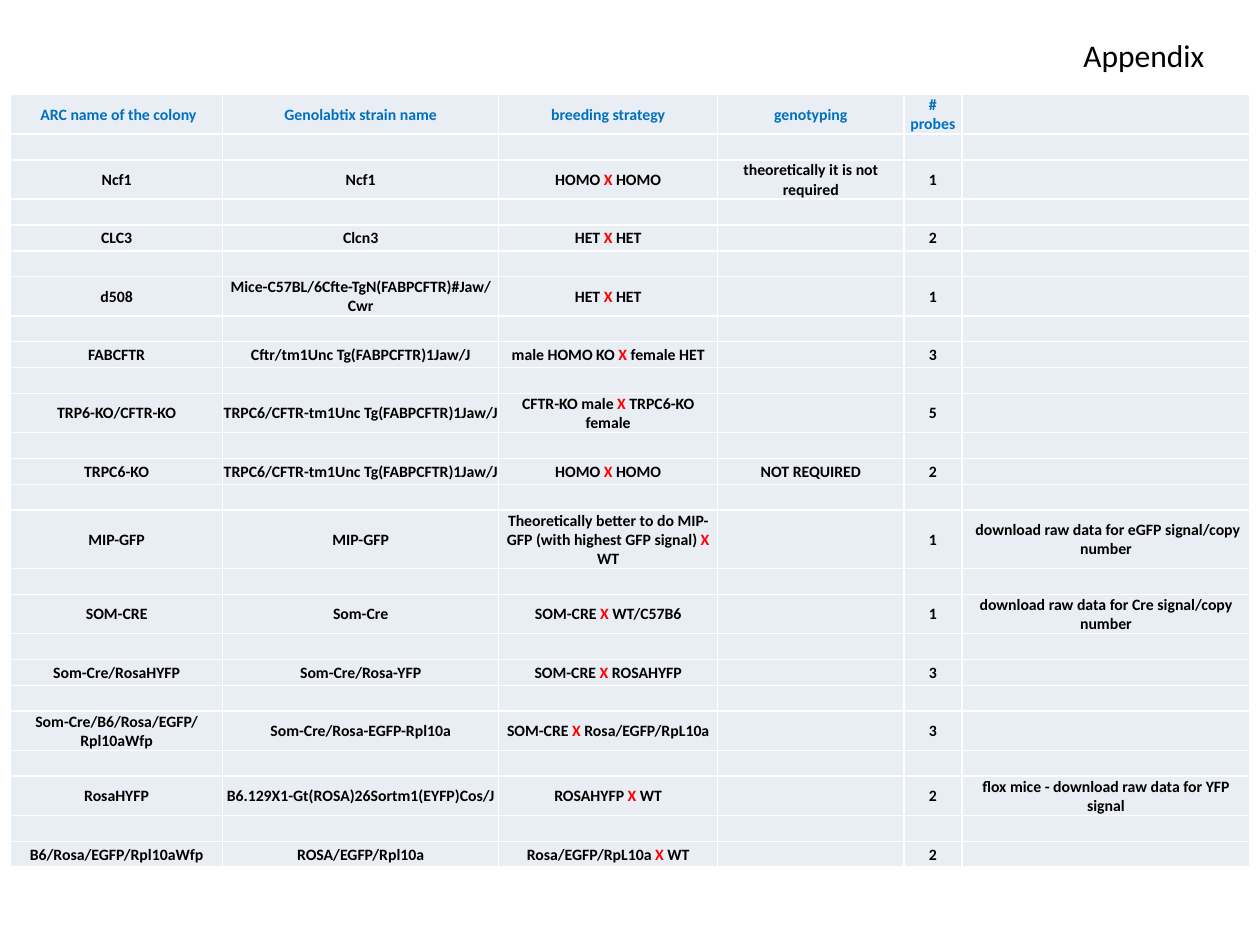
from lxml import etree
from pptx import Presentation
from pptx.dml.color import RGBColor
from pptx.enum import text
from pptx.oxml import ns
from pptx.util import Cm, Pt

FONT = "Calibri"
BLACK, BLUE, RED, WHITE, PALE = "000000", "0070C0", "FF0000", "FFFFFF", "E9EDF4"
CROSS = " X "
COLUMN_WIDTHS = [4.28, 5.56, 4.42, 3.75, 1.17, 5.81]
ROW_HEIGHT, TALL_ROW_HEIGHT = 0.52, 0.97
TALL_COLONY = "MIP-GFP"

HEADINGS = [" ARC name of the colony", "Genolabtix strain name", "breeding strategy",
            "genotyping", "# probes", ""]
COLONIES = [
    ["Ncf1", "Ncf1", "HOMO X HOMO", "theoretically it is not required", "1", ""],
    ["CLC3", "Clcn3", "HET X HET", "", "2", ""],
    ["d508", "Mice-C57BL/6Cfte-TgN(FABPCFTR)#Jaw/Cwr", "HET X HET", "", "1", ""],
    ["FABCFTR", "Cftr/tm1Unc Tg(FABPCFTR)1Jaw/J", "male HOMO KO X female HET", "", "3", ""],
    ["TRP6-KO/CFTR-KO", "TRPC6/CFTR-tm1Unc Tg(FABPCFTR)1Jaw/J",
     "CFTR-KO male X TRPC6-KO female", "", "5", ""],
    ["TRPC6-KO", "TRPC6/CFTR-tm1Unc Tg(FABPCFTR)1Jaw/J", "HOMO X HOMO", "NOT REQUIRED", "2", ""],
    [TALL_COLONY, "MIP-GFP", "Theoretically better to do MIP-GFP (with highest GFP signal) X WT",
     "", "1", " download raw data for eGFP signal/copy number"],
    ["SOM-CRE", "Som-Cre", "SOM-CRE X WT/C57B6", "", "1",
     "download raw data for Cre signal/copy number"],
    ["Som-Cre/RosaHYFP", "Som-Cre/Rosa-YFP", "SOM-CRE X ROSAHYFP", "", "3", ""],
    ["Som-Cre/B6/Rosa/EGFP/Rpl10aWfp", "Som-Cre/Rosa-EGFP-Rpl10a",
     "SOM-CRE X Rosa/EGFP/RpL10a", "", "3", ""],
    ["RosaHYFP", "B6.129X1-Gt(ROSA)26Sortm1(EYFP)Cos/J", "ROSAHYFP X WT", "", "2",
     "flox mice - download raw data for YFP signal"],
    ["B6/Rosa/EGFP/Rpl10aWfp", "ROSA/EGFP/Rpl10a", "Rosa/EGFP/RpL10a X WT", "", "2", ""],
]


def color(value):
    return RGBColor.from_string(value)


def set_font(font, size, value, bold=False):
    font.name = FONT
    font.size = Pt(size)
    font.bold = bold
    font.color.rgb = color(value)


def add_borders(cell):
    properties = cell._tc.get_or_add_tcPr()
    for side in ("lnL", "lnR", "lnT", "lnB"):
        line = etree.SubElement(properties, ns.qn(f"a:{side}"), w=str(Pt(1)))
        fill = etree.SubElement(line, ns.qn("a:solidFill"))
        etree.SubElement(fill, ns.qn("a:srgbClr"), val=WHITE)


def write_cell(paragraph, content, value):
    before, cross, after = content.partition(CROSS)
    if cross:
        paragraph.add_run().text = before + " "
        cross_run = paragraph.add_run()
        cross_run.text = cross.strip()
        cross_run.font.color.rgb = color(RED)
        paragraph.add_run().text = " " + after
    elif content:
        paragraph.add_run().text = content
    else:
        etree.SubElement(paragraph._p, ns.qn("a:endParaRPr"), sz="900")


def format_cell(cell, content, value):
    add_borders(cell)
    cell.fill.solid()
    cell.fill.fore_color.rgb = color(PALE)
    cell.vertical_anchor = text.MSO_ANCHOR.MIDDLE
    cell.margin_left = cell.margin_right = cell.margin_top = Cm(0.02)
    cell.margin_bottom = 0
    paragraph = cell.text_frame.paragraphs[0]
    paragraph.alignment = text.PP_ALIGN.CENTER
    set_font(paragraph.font, 9, value, bold=True)
    write_cell(paragraph, content, value)


def add_colony_table(slide):
    rows = [HEADINGS]
    for colony in COLONIES:
        rows += [[""] * len(HEADINGS), colony]
    heights = [TALL_ROW_HEIGHT if row[0] == TALL_COLONY else ROW_HEIGHT for row in rows]
    table = slide.shapes.add_table(len(rows), len(HEADINGS), Cm(0.21), Cm(1.91),
                                   Cm(sum(COLUMN_WIDTHS)), Cm(sum(heights))).table
    table.first_row = table.horz_banding = False
    for column, width in zip(table.columns, COLUMN_WIDTHS):
        column.width = Cm(width)
    for index, (row, contents, height) in enumerate(zip(table.rows, rows, heights)):
        row.height = Cm(height)
        for cell, content in zip(row.cells, contents):
            format_cell(cell, content, BLACK if index else BLUE)


def add_title(slide):
    frame = slide.shapes.add_textbox(Cm(21.59), Cm(0.61), Cm(3.12), Cm(1.02)).text_frame
    frame.word_wrap = False
    frame.auto_size = text.MSO_AUTO_SIZE.SHAPE_TO_FIT_TEXT
    paragraph = frame.paragraphs[0]
    paragraph.text = "Appendix"
    set_font(paragraph.font, 18, BLACK)


def main():
    presentation = Presentation()
    presentation.slide_width = Cm(25.4)
    presentation.slide_height = Cm(19.05)
    slide = presentation.slides.add_slide(presentation.slide_layouts[6])
    add_colony_table(slide)
    add_title(slide)
    presentation.save("out.pptx")


if __name__ == "__main__":
    main()
